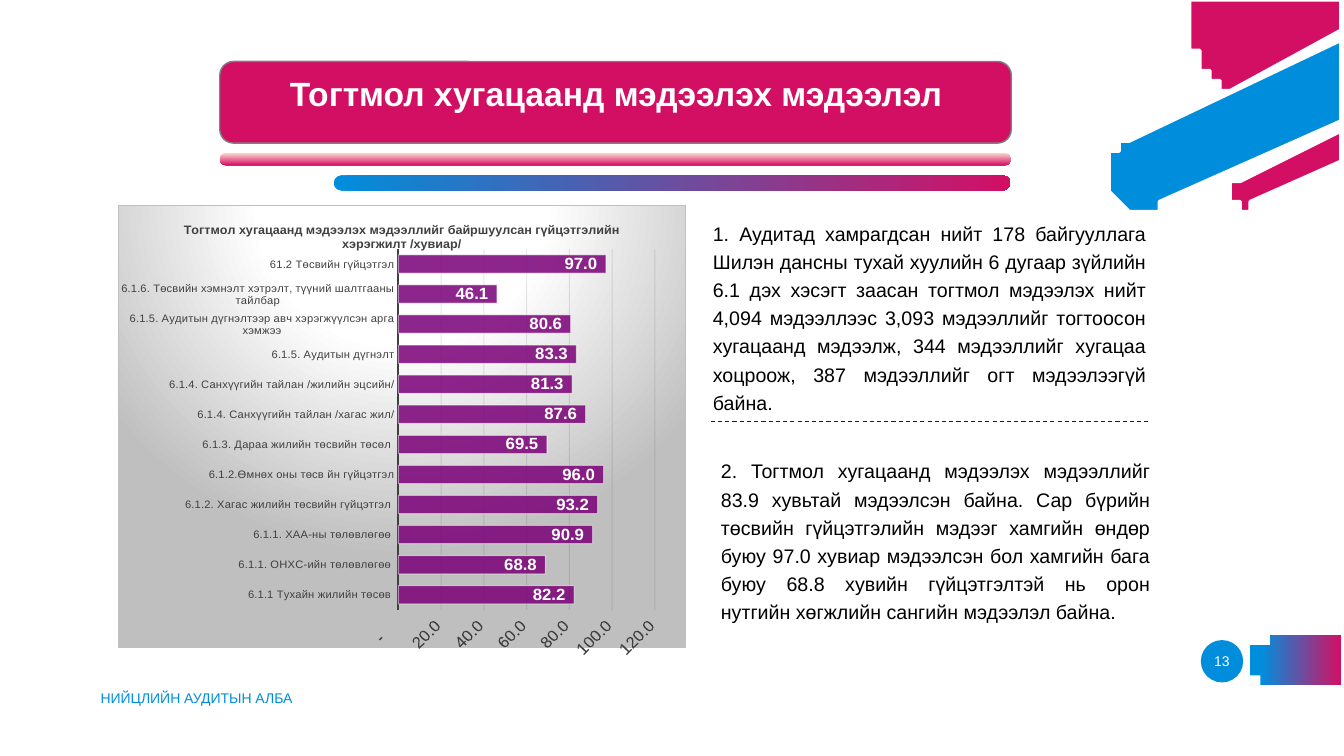
from lxml.etree import SubElement
from pptx import Presentation
from pptx.chart.data import CategoryChartData
from pptx.dml.color import RGBColor
from pptx.enum.chart import XL_CHART_TYPE as ChartType, XL_LABEL_POSITION as LabelPosition
from pptx.enum.chart import XL_TICK_MARK as TickMark
from pptx.enum.dml import MSO_LINE as LineStyle
from pptx.enum.shapes import MSO_CONNECTOR as Connector, MSO_SHAPE as Preset
from pptx.enum.text import MSO_ANCHOR as Anchor, MSO_AUTO_SIZE as AutoSize, PP_ALIGN as Align
from pptx.oxml import parse_xml
from pptx.oxml.ns import nsdecls, qn
from pptx.util import Inches, Pt

CELL = Inches(0.1)  # the slide is a grid of 133.3 columns by 75 rows
COLUMNS, ROWS = 133.3, 75
BLUE, PINK, WHITE, GREY = "008EDC", "D30F64", "FFFFFF", "404040"
NUMBER_FORMAT = r'_(* #,##0.0_);_(* \(#,##0.0\);_(* "-"??_);_(@_)'

TITLE = "Тогтмол хугацаанд мэдээлэх мэдээлэл"
CHART_TITLE = ("Тогтмол хугацаанд мэдээлэх мэдээллийг байршуулсан "
               "гүйцэтгэлийн хэрэгжилт /хувиар/")
RATES = [
    ("6.1.1 Тухайн жилийн төсөв ", 82.2),
    ("6.1.1. ОНХС-ийн төлөвлөгөө ", 68.8),
    ("6.1.1. ХАА-ны төлөвлөгөө ", 90.9),
    ("6.1.2. Хагас жилийн төсвийн гүйцэтгэл ", 93.2),
    ("6.1.2.Өмнөх оны төсв йн гүйцэтгэл", 96.0),
    ("6.1.3. Дараа жилийн төсвийн төсөл ", 69.5),
    ("6.1.4. Санхүүгийн тайлан /хагас жил/", 87.6),
    ("6.1.4. Санхүүгийн тайлан /жилийн эцсийн/", 81.3),
    ("6.1.5. Аудитын дүгнэлт", 83.3),
    ("6.1.5. Аудитын дүгнэлтээр авч хэрэгжүүлсэн арга хэмжээ", 80.6),
    ("6.1.6. Төсвийн хэмнэлт хэтрэлт, түүний шалтгааны тайлбар", 46.1),
    ("61.2 Төсвийн гүйцэтгэл", 97.0),
]
FINDINGS = [
    ("1. Аудитад хамрагдсан нийт 178 байгууллага Шилэн дансны тухай хуулийн 6 дугаар "
     "зүйлийн 6.1 дэх хэсэгт заасан тогтмол мэдээлэх нийт 4,094 мэдээллээс 3,093 "
     "мэдээллийг тогтоосон хугацаанд мэдээлж, 344 мэдээллийг хугацаа хоцроож, 387 "
     "мэдээллийг огт мэдээлээгүй байна.", (69.7, 21, 45, 20.8)),
    ("2. Тогтмол хугацаанд мэдээлэх мэдээллийг 83.9 хувьтай мэдээлсэн байна. Сар бүрийн "
     "төсвийн гүйцэтгэлийн мэдээг хамгийн өндөр буюу 97.0 хувиар мэдээлсэн бол хамгийн "
     "бага буюу 68.8 хувийн гүйцэтгэлтэй нь орон нутгийн хөгжлийн сангийн мэдээлэл байна.",
     (70.5, 44.6, 44.6, 18)),
]

# Outlines: a pair is a straight step, a six-number step is a Bezier curve.
DISC = [(118.8, 5.6), (118.8, 5.6, 119.7, 7.6, 121.7, 9), (133.3, 3.4), (133.3, 0),
        (117.6, 0), (117.4, 1.5, 117.6, 3.3, 118.6, 5.3)]
WIDE_BAND = [(112.1, 13.9), (112.1, 13.9, 108.5, 15.7, 110.1, 18.9),
             (110.1, 19), (110.1, 19, 111.7, 22.2, 115.4, 20.4), (133.3, 11.7), (133.3, 3.6)]
THIN_BAND = [(133.3, 12.6), (122.7, 17.8), (122.7, 17.8, 121.3, 18.5, 122, 19.7),
             (122, 19.8), (122, 19.8, 122.6, 21.1, 124, 20.4), (133.3, 15.8)]
PAGE_TAB = [(126.2, 67.7), (133.3, 67.7), (133.3, 63.4), (126.2, 63.4),
            (126.2, 63.4, 124.1, 63.4, 124.1, 65.5), (124.1, 65.6),
            (124.1, 65.6, 124.1, 67.7, 126.2, 67.7)]


def rgb(code):
    return RGBColor.from_string(code)


def cells(*counts):
    return [round(count * CELL) for count in counts]


def paint(shape, colors, angle=0, first_stop=0):
    """Fill with one colour, or with a two-colour gradient."""
    shape.shadow.inherit = False
    shape.line.fill.background()
    if isinstance(colors, str):
        shape.fill.solid()
        shape.fill.fore_color.rgb = rgb(colors)
        return
    shape.fill.gradient()
    shape.fill.gradient_angle = angle
    for stop, color, position in zip(shape.fill.gradient_stops, colors, (first_stop, 1)):
        stop.color.rgb = rgb(color)
        stop.position = position


def add_preset(page, preset, area, colors, roundness=None, **gradient):
    shape = page.shapes.add_shape(preset, *cells(*area))
    if roundness is not None:
        shape.adjustments[0] = roundness
    paint(shape, colors, **gradient)
    return shape


def flatten(outline, steps=16):
    """Turn the curves of an outline into short straight steps."""
    points = [outline[0]]
    for step in outline[1:]:
        if len(step) == 2:
            points.append(step)
            continue
        corners = [points[-1], step[:2], step[2:4], step[4:]]
        for number in range(1, steps + 1):
            t = number / steps
            weights = ((1 - t) ** 3, 3 * t * (1 - t) ** 2, 3 * t * t * (1 - t), t ** 3)
            points.append(tuple(sum(w * corner[axis] for w, corner in zip(weights, corners))
                                for axis in (0, 1)))
    return points


def add_outline(page, outline, colors, **gradient):
    points = flatten(outline)
    builder = page.shapes.build_freeform(*points[0], scale=CELL)
    builder.add_line_segments(points[1:])
    shape = builder.convert_to_shape()
    paint(shape, colors, **gradient)
    return shape


def style_font(font, size, color, bold=False):
    font.name, font.size, font.bold = "Arial", Pt(size), bold
    font.color.rgb = rgb(color)


def write(box, text, area, size, color, align=Align.LEFT, anchor=Anchor.TOP,
          bold=False, spacing=1.0):
    box.left, box.top, box.width, box.height = cells(*area)
    frame = box.text_frame
    frame.text = text
    frame.word_wrap, frame.auto_size, frame.vertical_anchor = True, AutoSize.NONE, anchor
    para = frame.paragraphs[0]
    para.alignment, para.line_spacing, para.space_before = align, spacing, Pt(0)
    style_font(para.font, size, color, bold)
    return para


def add_label(page, text, area, color, align):
    box = page.shapes.add_textbox(*cells(*area))
    write(box, text, area, 10, color, align, Anchor.MIDDLE)


def add_heading(page):
    add_preset(page, Preset.ROUNDED_RECTANGLE, (21.8, 15.2, 78.5, 1.2), ("FED4CB", PINK),
               0.5, angle=270)
    band = add_preset(page, Preset.ROUNDED_RECTANGLE, (21.8, 6.1, 78.5, 8.1), PINK, 0.167)
    band.line.color.rgb, band.line.width = rgb("808080"), Pt(1)
    title = page.shapes.title
    para = write(title, TITLE, (23, 6.7, 76.2, 5), 24, WHITE, Align.CENTER, bold=True)
    para.runs[0].font._element.append(parse_xml(
        f'<a:effectLst {nsdecls("a")}><a:outerShdw blurRad="38100" dist="38100" dir="2700000">'
        '<a:srgbClr val="000000"><a:alpha val="60000"/></a:srgbClr></a:outerShdw></a:effectLst>'))
    band.element.addnext(title.element)


def add_finding(box, text, area):
    para = write(box, text, area, 14, "000000", Align.JUSTIFY, spacing=1.2)
    properties = para._p.get_or_add_pPr()
    properties.set("marL", "0")
    properties.set("indent", "0")
    properties.find(qn("a:defRPr")).addprevious(parse_xml(f'<a:buNone {nsdecls("a")}/>'))


def set_alpha(fill_parent, percent):
    color = next(fill_parent.iter(qn("a:srgbClr")))
    SubElement(color, qn("a:alpha")).set("val", str(percent * 1000))


def add_rate_chart(page):
    data = CategoryChartData()
    data.categories = [name for name, _ in RATES]
    data.add_series("Series 1", [rate for _, rate in RATES])
    chart = page.shapes.add_chart(ChartType.BAR_CLUSTERED, *cells(11.7, 20.3, 56.3, 45.3),
                                  data).chart
    style_font(chart.font, 10, "000000")
    chart.has_legend = False
    chart.chart_title.text_frame.text = CHART_TITLE
    style_font(chart.chart_title.text_frame.paragraphs[0].runs[0].font, 9, GREY, True)

    names, values = chart.category_axis, chart.value_axis
    for axis, size in ((names, 8), (values, 12)):
        axis.major_tick_mark = axis.minor_tick_mark = TickMark.NONE
        style_font(axis.tick_labels.font, size, GREY)
    names.format.line.color.rgb, names.format.line.width = rgb(GREY), Pt(1.5)
    values.minimum_scale, values.maximum_scale, values.major_unit = 0, 120, 20
    values.format.line.fill.background()
    values.tick_labels.number_format = NUMBER_FORMAT
    values.tick_labels.number_format_is_linked = False
    values._element.find(qn("c:txPr")).find(qn("a:bodyPr")).set("rot", "-2700000")
    grid = values.major_gridlines.format.line
    grid.color.rgb, grid.width = rgb("0D0D0D"), Pt(0.75)
    set_alpha(values._element.find(qn("c:majorGridlines")), 10)

    plot = chart.plots[0]
    plot.gap_width, plot.vary_by_categories, plot.has_data_labels = 65, False, True
    labels = plot.data_labels
    labels.show_value, labels.position = True, LabelPosition.INSIDE_END
    labels.number_format, labels.number_format_is_linked = NUMBER_FORMAT, False
    style_font(labels.font, 12, WHITE, True)
    bars = plot.series[0]
    bars.format.fill.solid()
    bars.format.fill.fore_color.rgb = rgb("7A0078")
    set_alpha(bars._element, 85)
    bars.format.line.color.rgb, bars.format.line.width = rgb(WHITE), Pt(0.75)
    set_alpha(next(bars._element.iter(qn("a:ln"))), 50)
    place_plot(chart)
    shade_chart(chart)


def place_plot(chart):
    area = chart._chartSpace.chart.plotArea
    for layout in area.findall(qn("c:layout")):
        area.remove(layout)
    shares = "".join(f'<c:{tag} val="{share}"/>' for tag, share in
                     (("x", 0.494), ("y", 0.099), ("w", 0.453), ("h", 0.815)))
    area.insert(0, parse_xml(
        f'<c:layout {nsdecls("c")}><c:manualLayout><c:layoutTarget val="inner"/>'
        f'<c:xMode val="edge"/><c:yMode val="edge"/>{shares}</c:manualLayout></c:layout>'))


def shade_chart(chart):
    """Give the chart area a radial shade and a thin border."""
    stops = "".join(f'<a:gs pos="{percent * 1000}"><a:srgbClr val="{color}"/></a:gs>'
                    for percent, color in ((0, WHITE), (39, WHITE), (100, "BFBFBF")))
    chart._chartSpace.chart.addnext(parse_xml(
        f'<c:spPr {nsdecls("c", "a")}><a:gradFill><a:gsLst>{stops}</a:gsLst><a:path path="circle">'
        '<a:fillToRect l="50000" t="-80000" r="50000" b="180000"/></a:path></a:gradFill>'
        '<a:ln w="9525"><a:solidFill><a:srgbClr val="BFBFBF"/></a:solidFill></a:ln></c:spPr>'))


def add_divider(page):
    line = page.shapes.add_connector(Connector.STRAIGHT, *cells(70.5, 41.8, 114, 41.8))
    line.line.color.rgb, line.line.width = rgb("1C1C1C"), Pt(0.75)
    line.line.dash_style = LineStyle.DASH
    SubElement(line.element.spPr, qn("a:effectLst"))


def add_decoration(page):
    add_preset(page, Preset.OVAL, (119.1, 63.5, 4.2, 4.2), BLUE)
    add_outline(page, PAGE_TAB, (BLUE, PINK), first_stop=0.12)
    add_preset(page, Preset.ROUNDED_RECTANGLE, (33.1, 17.4, 67.1, 1.5), (BLUE, PINK), 0.5)
    for outline, color in ((DISC, PINK), (WIDE_BAND, BLUE), (THIN_BAND, PINK)):
        shape = add_outline(page, outline, color)
        shape.line.color.rgb, shape.line.width = rgb(WHITE), Pt(2.5)


def main():
    deck = Presentation()
    deck.slide_width, deck.slide_height = cells(COLUMNS, ROWS)
    page = deck.slides.add_slide(deck.slide_layouts.get_by_name("Two Content"))
    add_decoration(page)
    add_label(page, "НИЙЦЛИЙН АУДИТЫН АЛБА", (9, 67.2, 45, 4), BLUE, Align.LEFT)
    add_label(page, "13", (118.2, 63.6, 6, 4), WHITE, Align.CENTER)
    add_heading(page)
    add_rate_chart(page)
    for number, (text, area) in enumerate(FINDINGS, start=1):
        add_finding(page.placeholders[number], text, area)
    add_divider(page)
    deck.save("out.pptx")


if __name__ == "__main__":
    main()
